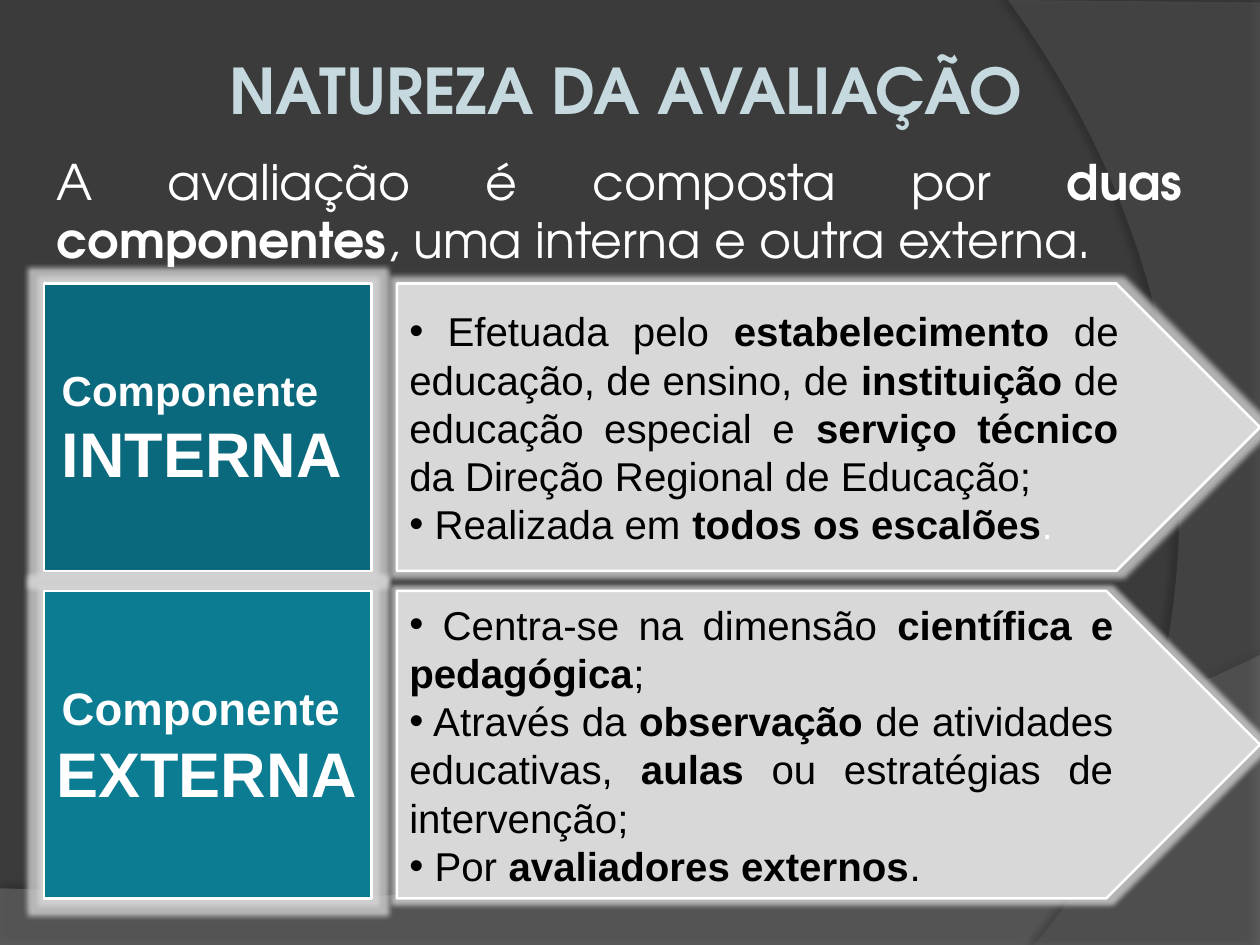
import pptx
import pptx.util
import pptx.dml.color
import pptx.enum.shapes
import pptx.enum.text
import pptx.oxml
import pptx.oxml.ns

Pt = pptx.util.Pt
ALIGN = pptx.enum.text.PP_ALIGN
SHAPE = pptx.enum.shapes.MSO_SHAPE

COLORS = {
    "background": "3B3B3B", "wave": "7F7F7F", "arc": "5E5E5E",
    "title": "C5D9DF", "white": "FFFFFF", "black": "000000",
    "internal": "0A697C", "external": "0C7C92", "arrow": "D8D8D8",
}
HEADING_FONT, BODY_FONT = "TeX Gyre Adventor", "Arial"

# Text between ** marks is bold.
TITLE = "**NATUREZA DA AVALIAÇÃO**"
INTRO = "A avaliação é composta por **duas componentes**, uma interna e outra externa."
# Each component: colour, top, height, label lines (text, size, indent), points
COMPONENTS = [
    ("internal", 162, 164.2,
     [("**Componente**", 24, 3), ("**INTERNA**", 36, 3)],
     [" Efetuada pelo **estabelecimento** de educação, de ensino, de **instituição** "
      "de educação especial e **serviço técnico** da Direção Regional de Educação;",
      " Realizada em **todos os escalões**"]),
    ("external", 337.7, 175.7,
     [("**Componente**", 26, 3), ("**EXTERNA**", 36, 0)],
     [" Centra-se na dimensão **científica e pedagógica**;",
      " Através da **observação** de atividades educativas, **aulas** ou "
      "estratégias de intervenção;",
      " Por **avaliadores externos**."]),
]
LABEL_LEFT, LABEL_WIDTH = 25.2, 187.2
ARROW_LEFT, ARROW_WIDTH = 226.8, 493.2

# Background outlines: a start point, then line points or (control, control, end)
WAVE = [(0, 507.6), (0, 540), (720, 540), (720, 374.4),
        ((402.5, 524.9), (281.5, 517.7), (0, 507.6))]
ARC = [(720, 1.4), (720, 540), (591.1, 540),
       ((673.2, 445.7), (733, 216), (576, 0))]
# Outline, colour, opacity, shadow opacity, shadow distance, shadow angle
DECORATIONS = [(WAVE, "wave", 45, 35, 3.5, 270), (ARC, "arc", 40, 45, 4, 180)]


def rgb(name):
    return pptx.dml.color.RGBColor.from_string(COLORS[name])


def paint(fill, name):
    fill.solid()
    fill.fore_color.rgb = rgb(name)


def set_effect(shape, content):
    """Replace the shape's effects with the given DrawingML content."""
    shape.shadow.inherit = False
    effects = shape._element.spPr.find(pptx.oxml.ns.qn("a:effectLst"))
    effects.append(pptx.oxml.parse_xml(content))


def effect_xml(tag, attributes, name, opacity):
    return (f'<a:{tag} {pptx.oxml.ns.nsdecls("a")} {attributes}>'
            f'<a:srgbClr val="{COLORS[name]}"><a:alpha val="{opacity * 1000}"/>'
            f'</a:srgbClr></a:{tag}>')


def curve(start, first, second, end, steps=40):
    """Points along a cubic Bézier curve, without its start."""
    for step in range(1, steps + 1):
        t = step / steps
        weights = ((1 - t) ** 3, 3 * t * (1 - t) ** 2, 3 * t * t * (1 - t), t ** 3)
        yield tuple(sum(w * p[axis] for w, p in zip(weights, (start, first, second, end)))
                    for axis in (0, 1))


def add_decoration(slide, outline, color, opacity, shadow, distance, angle):
    points = [outline[0]]
    for part in outline[1:]:
        points += curve(points[-1], *part) if len(part) == 3 else [part]
    points = [(Pt(x), Pt(y)) for x, y in points]
    builder = slide.shapes.build_freeform(*points[0], scale=1.0)
    builder.add_line_segments(points[1:], close=True)
    shape = builder.convert_to_shape()
    paint(shape.fill, color)
    shape.line.fill.background()
    fill_color = shape._element.spPr.find(
        pptx.oxml.ns.qn("a:solidFill")).find(pptx.oxml.ns.qn("a:srgbClr"))
    alpha = fill_color.makeelement(pptx.oxml.ns.qn("a:alpha"), {"val": str(opacity * 1000)})
    fill_color.append(alpha)
    place = f'blurRad="{Pt(4)}" dist="{Pt(distance)}" dir="{angle * 60000}"'
    set_effect(shape, effect_xml("outerShdw", place, "black", shadow))


def add_run(paragraph, text, size, color, font=BODY_FONT, bold=False):
    run = paragraph.add_run()
    run.text = text
    for key, value in {"name": font, "size": Pt(size), "bold": bold}.items():
        setattr(run.font, key, value)
    run.font.color.rgb = rgb(color)


def write(paragraph, text, size, color, font=BODY_FONT, align=ALIGN.JUSTIFY):
    paragraph.alignment = align
    for number, part in enumerate(text.split("**")):
        if part:
            add_run(paragraph, part, size, color, font, bold=number % 2 == 1)


def paragraphs(frame, count):
    return [frame.paragraphs[0]] + [frame.add_paragraph() for _ in range(count - 1)]


def set_bullet(paragraph):
    properties = paragraph._p.get_or_add_pPr()
    properties.append(pptx.oxml.parse_xml(
        f'<a:buFont {pptx.oxml.ns.nsdecls("a")} typeface="{BODY_FONT}"/>'))
    properties.append(pptx.oxml.parse_xml(
        f'<a:buChar {pptx.oxml.ns.nsdecls("a")} char="•"/>'))


def add_heading(slide, box, text, size, color, align):
    frame = slide.shapes.add_textbox(*map(Pt, box)).text_frame
    frame.word_wrap = True
    write(frame.paragraphs[0], text, size, color, HEADING_FONT, align)


def add_block(slide, kind, box, color):
    """Add a glowing, white-edged block and return its text frame."""
    shape = slide.shapes.add_shape(kind, *map(Pt, box))
    paint(shape.fill, color)
    shape.line.color.rgb = rgb("white")
    shape.line.width = Pt(1.5)
    set_effect(shape, effect_xml("glow", f'rad="{Pt(6)}"', "arrow", 75))
    frame = shape.text_frame
    frame.word_wrap = True
    frame.vertical_anchor = pptx.enum.text.MSO_ANCHOR.MIDDLE
    return frame


def add_component(slide, color, top, height, label, points):
    frame = add_block(slide, SHAPE.RECTANGLE,
                      (LABEL_LEFT, top, LABEL_WIDTH, height), color)
    for paragraph, (text, size, indent) in zip(paragraphs(frame, len(label)), label):
        write(paragraph, text, size, "white")
        paragraph._p.get_or_add_pPr().set("marL", str(Pt(indent)))

    frame = add_block(slide, SHAPE.PENTAGON,
                      (ARROW_LEFT, top, ARROW_WIDTH, height), "arrow")
    frame.margin_right = Pt(39.6)
    for paragraph, text in zip(paragraphs(frame, len(points)), points):
        write(paragraph, text, 23, "black")
        set_bullet(paragraph)
    return frame


def main():
    presentation = pptx.Presentation()
    presentation.slide_width, presentation.slide_height = Pt(720), Pt(540)
    slide = presentation.slides.add_slide(presentation.slide_layouts[6])
    paint(slide.background.fill, "background")
    for decoration in DECORATIONS:
        add_decoration(slide, *decoration)
    add_heading(slide, (20.2, 25.9, 674.6, 51.1), TITLE, 36, "title", ALIGN.CENTER)
    add_heading(slide, (25.2, 82.8, 657.4, 74.9), INTRO, 28, "white", ALIGN.JUSTIFY)
    internal, _ = [add_component(slide, *component) for component in COMPONENTS]
    add_run(internal.paragraphs[-1], ".", 22, "white")
    presentation.save("out.pptx")


if __name__ == "__main__":
    main()
